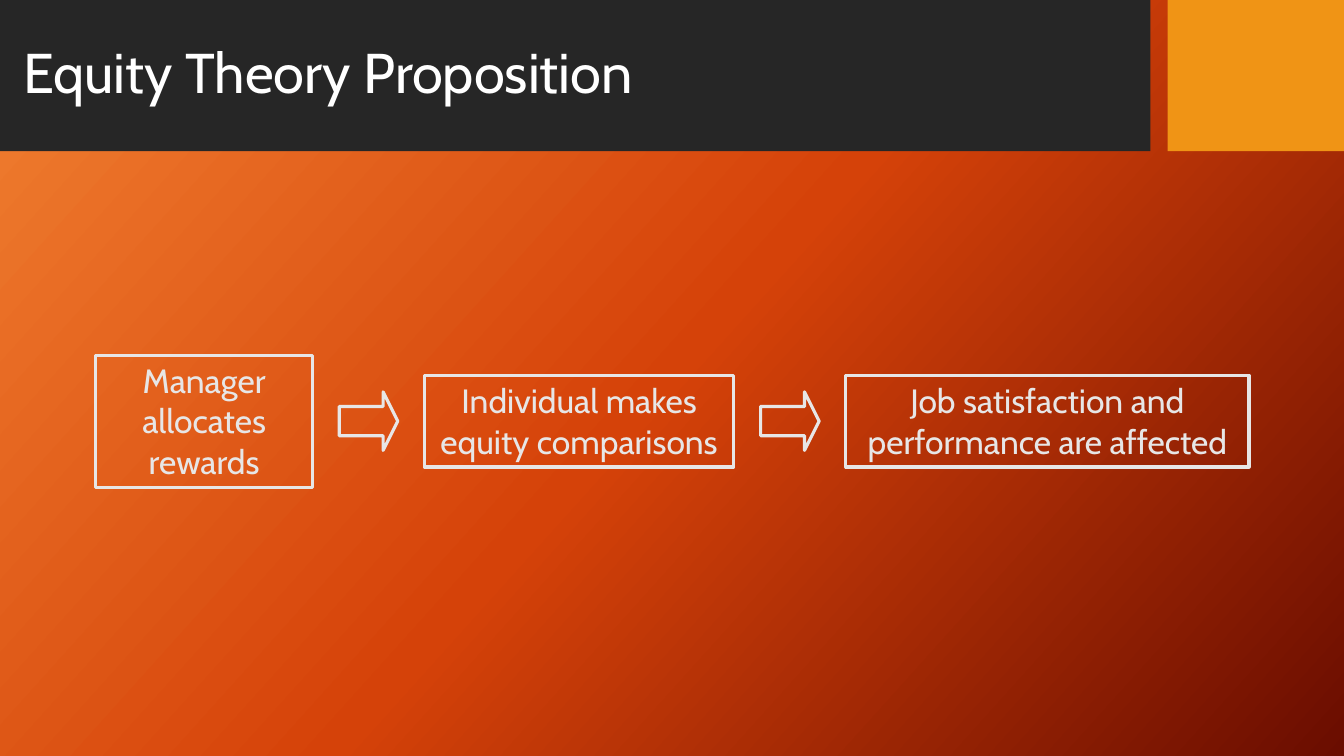
from copy import deepcopy

from pptx import Presentation
from pptx.dml.color import RGBColor
from pptx.enum.shapes import MSO_SHAPE
from pptx.enum.text import MSO_ANCHOR, PP_ALIGN
from pptx.util import Pt

COLOURS = {
    "band": "262626",
    "accent": "F09415",
    "title": "FFFFFF",
    "outline": "E7E6E6",
    "glow": "F18031",
    "flame": "D54209",
    "ember": "6A0D00",
}
GRADIENT = [(0, "glow"), (0.5, "flame"), (1, "ember")]
FONT = "Cabin"
BAND_HEIGHT = 108
FLOW_LEFT = 68.4
FLOW_MIDDLE = 300.8
FLOW_GAP = 80
ARROW_SIZE = 41.8
STEPS = [
    ("Manager allocates rewards", 154.8, 94.3),
    ("Individual makes equity comparisons", 221, 65.5),
    ("Job satisfaction and performance are affected", 288, 65.5),
]


def colour(name):
    return RGBColor.from_string(COLOURS[name])


def paint_background(page):
    fill = page.background.fill
    fill.gradient()
    fill.gradient_angle = 318
    first_stop = page.element.xpath(".//p:bg//a:gs")[0]
    first_stop.addnext(deepcopy(first_stop))
    for stop, (position, name) in zip(fill.gradient_stops, GRADIENT):
        stop.position = position
        stop.color.rgb = colour(name)


def add_band(page, left, width, fill_name):
    band = page.shapes.add_shape(
        MSO_SHAPE.RECTANGLE, Pt(left), Pt(0), Pt(width), Pt(BAND_HEIGHT))
    band.shadow.inherit = False
    band.fill.solid()
    band.fill.fore_color.rgb = colour(fill_name)
    band.line.fill.background()


def format_paragraph(para, size, colour_name, alignment):
    para.alignment = alignment
    para.font.name = FONT
    para.font.size = Pt(size)
    para.font.color.rgb = colour(colour_name)


def set_title(page, text):
    title = page.shapes.title
    title.left, title.top, title.width, title.height = Pt(9.4), Pt(11.5), Pt(801.4), Pt(85)
    title.text_frame.text = text
    title.text_frame.vertical_anchor = MSO_ANCHOR.MIDDLE
    para = title.text_frame.paragraphs[0]
    para.line_spacing = 0.9
    format_paragraph(para, 40, "title", PP_ALIGN.LEFT)
    page.shapes.element.append(title.element)


def add_outline(page, preset, left, width, height):
    shape = page.shapes.add_shape(
        preset, Pt(left), Pt(FLOW_MIDDLE - height / 2), Pt(width), Pt(height))
    shape.shadow.inherit = False
    shape.fill.background()
    shape.line.color.rgb = colour("outline")
    shape.line.width = Pt(2.25)
    return shape


def add_step(page, text, left, width, height):
    box = add_outline(page, MSO_SHAPE.RECTANGLE, left, width, height)
    box.text_frame.word_wrap = True
    box.text_frame.vertical_anchor = MSO_ANCHOR.TOP
    box.text_frame.text = text
    format_paragraph(box.text_frame.paragraphs[0], 24, "outline", PP_ALIGN.CENTER)


def add_arrow(page, left):
    arrow = add_outline(page, MSO_SHAPE.RIGHT_ARROW, left, ARROW_SIZE, ARROW_SIZE)
    arrow.adjustments[0] = 0.5
    arrow.adjustments[1] = 0.25


def add_flow(page):
    left = FLOW_LEFT
    for index, (text, width, height) in enumerate(STEPS):
        if index:
            add_arrow(page, left - (FLOW_GAP + ARROW_SIZE) / 2)
        add_step(page, text, left, width, height)
        left += width + FLOW_GAP


def main():
    deck = Presentation()
    deck.slide_width, deck.slide_height = Pt(960), Pt(540)
    page = deck.slides.add_slide(deck.slide_layouts[5])
    paint_background(page)
    add_band(page, 0, 821.8, "band")
    add_band(page, 834, 126, "accent")
    set_title(page, "Equity Theory Proposition")
    add_flow(page)
    deck.save("out.pptx")


if __name__ == "__main__":
    main()
